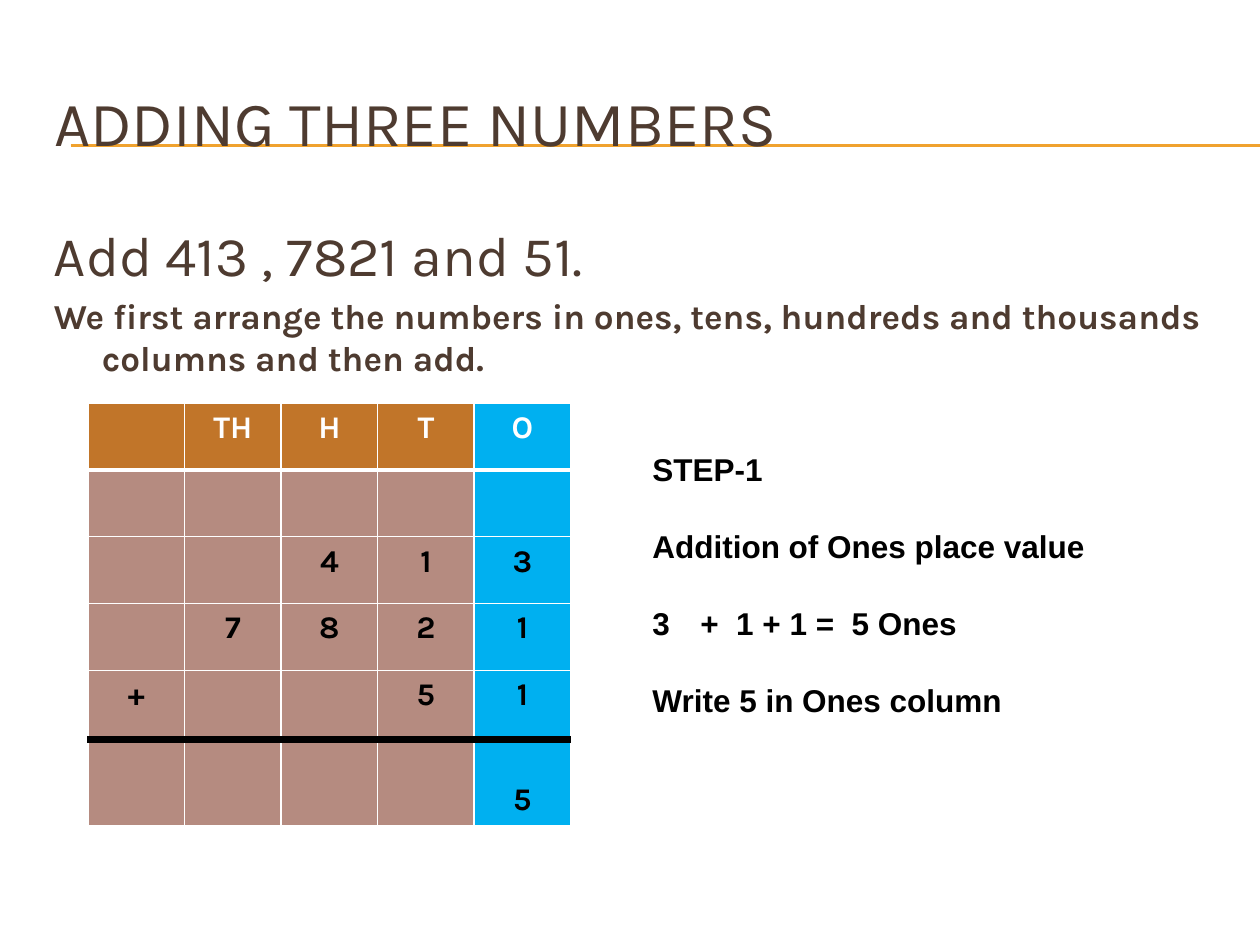
from lxml.etree import SubElement
from pptx import Presentation
from pptx.dml.color import RGBColor
from pptx.enum.text import MSO_ANCHOR, PP_ALIGN
from pptx.oxml.ns import qn
from pptx.util import Inches, Pt

BROWN = RGBColor(0x4E, 0x3B, 0x30)
GOLD = RGBColor(0xF0, 0xA2, 0x2E)
ORANGE = RGBColor(0xC1, 0x75, 0x29)
ROSE = RGBColor(0xB5, 0x8B, 0x80)
BLUE = RGBColor(0x00, 0xB0, 0xF0)
WHITE = RGBColor(0xFF, 0xFF, 0xFF)
BLACK = RGBColor(0x00, 0x00, 0x00)

WIDTH, HEIGHT = 10, 7.5
MARGIN, TEXT_WIDTH = 0.33, 9.5
HANGING = 0.38
RULE_LEFT, RULE_TOPS = 0.56, (1.15, 1.16)

TITLE = "ADDING THREE NUMBERS"
TASK = [
    ("Add 413 , 7821 and 51.", 32, False, 0),
    ("We first arrange the numbers in ones, tens, hundreds and thousands "
     "columns and then add.", 20, True, 4),
]
SUM_ROWS = [
    ("", "TH", "H", "T", "O"),
    ("", "", "", "", ""),
    ("", "", "4", "1", "3"),
    ("", "7", "8", "2", "1"),
    ("+", "", "", "5", "1"),
    ("", "", "", "", "5"),
]
ROW_HEIGHTS = (0.53, 0.53, 0.53, 0.53, 0.55, 0.68)
COLUMN_WIDTH = 0.766
STEP_GAP = 22.4
STEPS = [
    ("STEP-1", None),
    ("Addition of Ones place value", None),
    ("+  1 + 1 =  5 Ones", 3),
    ("Write 5 in Ones column", None),
]


def add_run(paragraph, text, size, color, bold=False, font="Karla"):
    """Add one formatted run to a paragraph."""
    run = paragraph.add_run()
    run.text = text
    run.font.name = font
    run.font.size = Pt(size)
    run.font.bold = bold
    run.font.color.rgb = color
    return run


def next_paragraph(frame, index, space_before=0):
    """Return the first paragraph or a new one, with its spacing."""
    paragraph = frame.add_paragraph() if index else frame.paragraphs[0]
    if index:
        paragraph.space_before = Pt(space_before)
    return paragraph


def hang(paragraph):
    """Give a paragraph a hanging indent."""
    properties = paragraph._p.get_or_add_pPr()
    properties.set("marL", str(Inches(HANGING)))
    properties.set("indent", str(-Inches(HANGING)))
    return properties


def add_text_frame(slide, left, top, width, height):
    """Add a wrapping text box and return its text frame."""
    box = slide.shapes.add_textbox(*map(Inches, (left, top, width, height)))
    box.text_frame.word_wrap = True
    return box.text_frame


def add_rules(slide):
    """Draw the double rule under the title."""
    for top in RULE_TOPS:
        rule = slide.shapes.add_connector(
            1, Inches(RULE_LEFT), Inches(top), Inches(WIDTH), Inches(top))
        rule.line.color.rgb = GOLD
        rule.line.width = Pt(0.75)
        SubElement(rule.element.spPr, qn("a:effectLst"))


def format_title(slide):
    """Place the title in front of the rules, with a soft text shadow."""
    title = slide.shapes.title
    title.element.getparent().append(title.element)
    title.left, title.top = Inches(MARGIN), Inches(0.5)
    title.width, title.height = Inches(TEXT_WIDTH), Inches(0.92)
    frame = title.text_frame
    frame.vertical_anchor = MSO_ANCHOR.MIDDLE
    paragraph = frame.paragraphs[0]
    paragraph.alignment = PP_ALIGN.LEFT
    run = add_run(paragraph, TITLE, 36, BROWN)
    effects = SubElement(run.font._element, qn("a:effectLst"))
    run.font.fill._xPr.find(qn("a:solidFill")).addnext(effects)
    shadow = SubElement(effects, qn("a:outerShdw"), blurRad="50800",
                        dist="38100", dir="2700000", algn="tl")
    color = SubElement(shadow, qn("a:srgbClr"), val=str(BLACK))
    SubElement(color, qn("a:alpha"), val="40000")


def add_task(slide):
    """Write the task and its instruction."""
    frame = add_text_frame(slide, MARGIN, 1.7, TEXT_WIDTH, 1.4)
    for index, (text, size, bold, gap) in enumerate(TASK):
        paragraph = next_paragraph(frame, index, gap)
        hang(paragraph)
        add_run(paragraph, text, size, BROWN, bold)


def set_borders(cell, row):
    """Draw white cell borders, with a thick black line above the result."""
    last = len(SUM_ROWS) - 1
    top = (BLACK, 4.5) if row == last else (WHITE, 3 if row == 1 else 1)
    bottom = (BLACK, 4.5) if row == last - 1 else (WHITE, 1 if row else 3)
    sides = {"lnL": (WHITE, 1), "lnR": (WHITE, 1), "lnT": top, "lnB": bottom}
    properties = cell._tc.get_or_add_tcPr()
    for position, (side, (color, width)) in enumerate(sides.items()):
        line = SubElement(properties, qn(f"a:{side}"), w=str(Pt(width)))
        properties.insert(position, line)
        fill = SubElement(line, qn("a:solidFill"))
        SubElement(fill, qn("a:srgbClr"), val=str(color))


def add_sum_table(slide):
    """Build the place value table."""
    columns = len(SUM_ROWS[0])
    table = slide.shapes.add_table(
        len(SUM_ROWS), columns, Inches(0.7), Inches(3.2),
        Inches(COLUMN_WIDTH * columns), Inches(sum(ROW_HEIGHTS))).table
    for column in table.columns:
        column.width = Inches(COLUMN_WIDTH)
    for row, values in enumerate(SUM_ROWS):
        table.rows[row].height = Inches(ROW_HEIGHTS[row])
        for column, value in enumerate(values):
            cell = table.cell(row, column)
            cell.fill.solid()
            base = ROSE if row else ORANGE
            cell.fill.fore_color.rgb = BLUE if column == columns - 1 else base
            set_borders(cell, row)
            if row == len(SUM_ROWS) - 1:
                cell.vertical_anchor = MSO_ANCHOR.BOTTOM
            if value:
                paragraph = cell.text_frame.paragraphs[0]
                paragraph.alignment = PP_ALIGN.CENTER
                add_run(paragraph, value, 18, BLACK if row else WHITE, True)


def add_steps(slide):
    """Write the explanation beside the table."""
    frame = add_text_frame(slide, 5.08, 3.52, 3.91, 2.52)
    for index, (text, number) in enumerate(STEPS):
        paragraph = next_paragraph(frame, index, STEP_GAP)
        if number:
            properties = hang(paragraph)
            SubElement(properties, qn("a:buFont"), typeface="Arial")
            SubElement(properties, qn("a:buAutoNum"),
                       type="arabicPlain", startAt=str(number))
        add_run(paragraph, text, 18, BLACK, True, "Arial")


def main():
    """Build and save the slide."""
    presentation = Presentation()
    presentation.slide_width = Inches(WIDTH)
    presentation.slide_height = Inches(HEIGHT)
    slide = presentation.slides.add_slide(presentation.slide_layouts[5])
    add_rules(slide)
    format_title(slide)
    add_task(slide)
    add_sum_table(slide)
    add_steps(slide)
    presentation.save("out.pptx")


if __name__ == "__main__":
    main()
